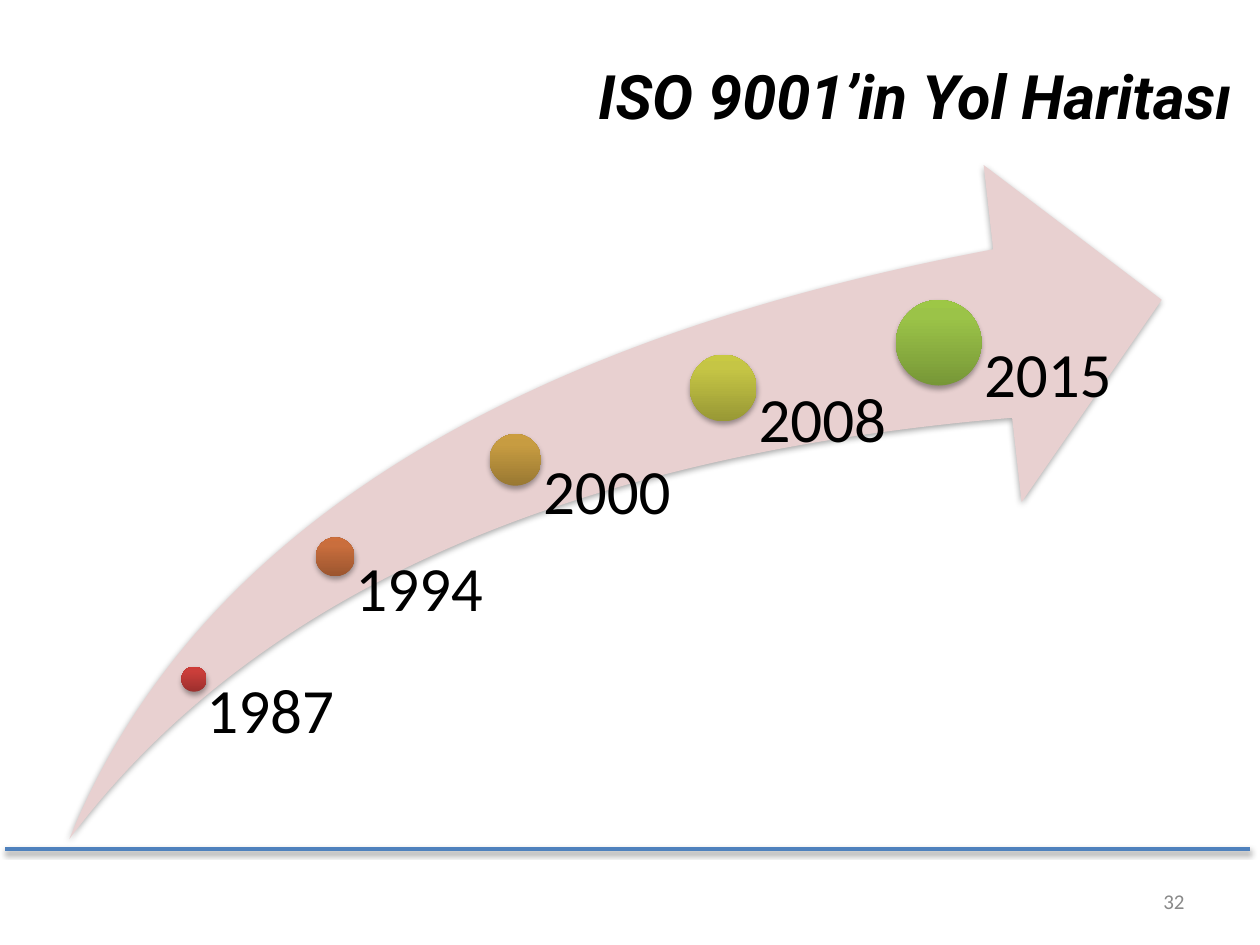
from copy import deepcopy
from dataclasses import dataclass

from lxml.etree import SubElement
from pptx import Presentation
from pptx.dml.color import RGBColor as RGB
from pptx.enum.shapes import MSO_CONNECTOR as CONN, MSO_SHAPE as SHAPE
from pptx.enum.text import MSO_ANCHOR as ANCHOR, PP_ALIGN as ALIGN
from pptx.oxml.ns import qn
from pptx.util import Inches, Pt


@dataclass(frozen=True)
class Theme:
    body_font: str = "Calibri"
    title_font: str = "Roboto"
    text: str = "000000"
    muted: str = "898989"
    rule: str = "4F81BD"
    arrow: str = "E8D0D0"
    title_size: int = 35
    year_size: int = 36
    number_size: int = 12


@dataclass(frozen=True)
class Milestone:
    year: str
    cx: float
    cy: float
    diameter: float
    label_width: float
    inset: float
    gradient: tuple[str, str, str]


THEME = Theme()
ARROW_BOX = (0.55, 1.31, 8.67, 5.35)
ARROW_BOTTOM = ARROW_BOX[1] + ARROW_BOX[3]
STOPS = (0, 0.8, 1)
MILESTONES = (
    Milestone("1987", 1.54, 5.39, 0.2, 1.12, 0.1, ("9C2F2D", "CB3E3A", "CE3B37")),
    Milestone("1994", 2.66, 4.42, 0.31, 1.42, 0.16, ("9B552F", "C96E3D", "CD6E3B")),
    Milestone("2000", 4.09, 3.65, 0.41, 1.65, 0.22, ("997832", "C79C41", "CB9D3F")),
    Milestone("2008", 5.74, 3.08, 0.53, 1.71, 0.28, ("989835", "C5C545", "C8C942")),
    Milestone("2015", 7.45, 2.72, 0.68, 1.71, 0.36, ("779737", "9BC348", "9DC746")),
)


def add_shadow(spPr, dist: float, opacity: int) -> None:
    effects = spPr.find(qn("a:effectLst"))
    if effects is None:
        effects = SubElement(spPr, qn("a:effectLst"))
    shadow = SubElement(effects, qn("a:outerShdw"), blurRad=str(Pt(3.1)),
                        dist=str(Pt(dist)), dir="5400000", rotWithShape="0")
    color = SubElement(shadow, qn("a:srgbClr"), val="000000")
    SubElement(color, qn("a:alpha"), val=str(opacity * 1000))


def add_figure(slide, kind: SHAPE, box: tuple):
    sp = slide.shapes.add_shape(kind, *map(Inches, box))
    sp.shadow.inherit = False
    sp.line.fill.background()
    add_shadow(sp._element.spPr, 1.8, 35)
    return sp


def add_text(slide, box: tuple, text: str, color: str, font: dict,
             frame: dict, para: dict) -> None:
    tf = slide.shapes.add_textbox(*map(Inches, box)).text_frame
    p = tf.paragraphs[0]
    r = p.add_run()
    r.text = text
    r.font.color.rgb = RGB.from_string(color)
    formats = ((tf, {"word_wrap": True, **frame}), (p, para), (r.font, font))
    for target, values in formats:
        for name, value in values.items():
            setattr(target, name, value)


def add_arrow(slide) -> None:
    sp = add_figure(slide, SHAPE.SWOOSH_ARROW, ARROW_BOX)
    sp.adjustments[0] = sp.adjustments[1] = 0.25
    sp.fill.solid()
    sp.fill.fore_color.rgb = RGB.from_string(THEME.arrow)


def add_milestone(slide, m: Milestone) -> None:
    radius = m.diameter / 2
    sp = add_figure(slide, SHAPE.OVAL,
                    (m.cx - radius, m.cy - radius, m.diameter, m.diameter))
    sp.fill.gradient()
    sp.fill.gradient_angle = 90
    stop_list = sp._element.spPr.find(".//" + qn("a:gsLst"))
    stop_list.append(deepcopy(stop_list[-1]))
    for stop, position, color in zip(sp.fill.gradient_stops, STOPS, m.gradient):
        stop.position = position
        stop.color.rgb = RGB.from_string(color)
    add_text(slide, (m.cx, m.cy, m.label_width, ARROW_BOTTOM - m.cy),
             m.year, THEME.text,
             {"name": THEME.body_font, "size": Pt(THEME.year_size)},
             {"margin_left": Inches(m.inset), "margin_top": 0,
              "margin_right": 0, "margin_bottom": 0},
             {"line_spacing": 0.9})


def add_rule(slide) -> None:
    line = slide.shapes.add_connector(
        CONN.STRAIGHT, *map(Inches, (0.04, 6.74, 9.92, 6.74)))
    line.line.color.rgb = RGB.from_string(THEME.rule)
    line.line.width = Pt(2)
    add_shadow(line._element.spPr, 1.6, 38)


def main() -> None:
    prs = Presentation()
    prs.slide_width, prs.slide_height = Inches(10), Inches(7.5)
    slide = prs.slides.add_slide(prs.slide_layouts[6])
    middle = {"vertical_anchor": ANCHOR.MIDDLE}
    right = {"alignment": ALIGN.RIGHT}

    add_text(slide, (7.17, 6.95, 2.33, 0.4), "32", THEME.muted,
             {"name": THEME.body_font, "size": Pt(THEME.number_size)},
             middle, right)
    add_rule(slide)
    add_arrow(slide)
    for milestone in MILESTONES:
        add_milestone(slide, milestone)
    add_text(slide, (2.85, 0.52, 7.03, 0.47), "ISO 9001’in Yol Haritası",
             THEME.text,
             {"name": THEME.title_font, "size": Pt(THEME.title_size),
              "bold": True, "italic": True},
             middle, right)
    prs.save("out.pptx")


if __name__ == "__main__":
    main()
